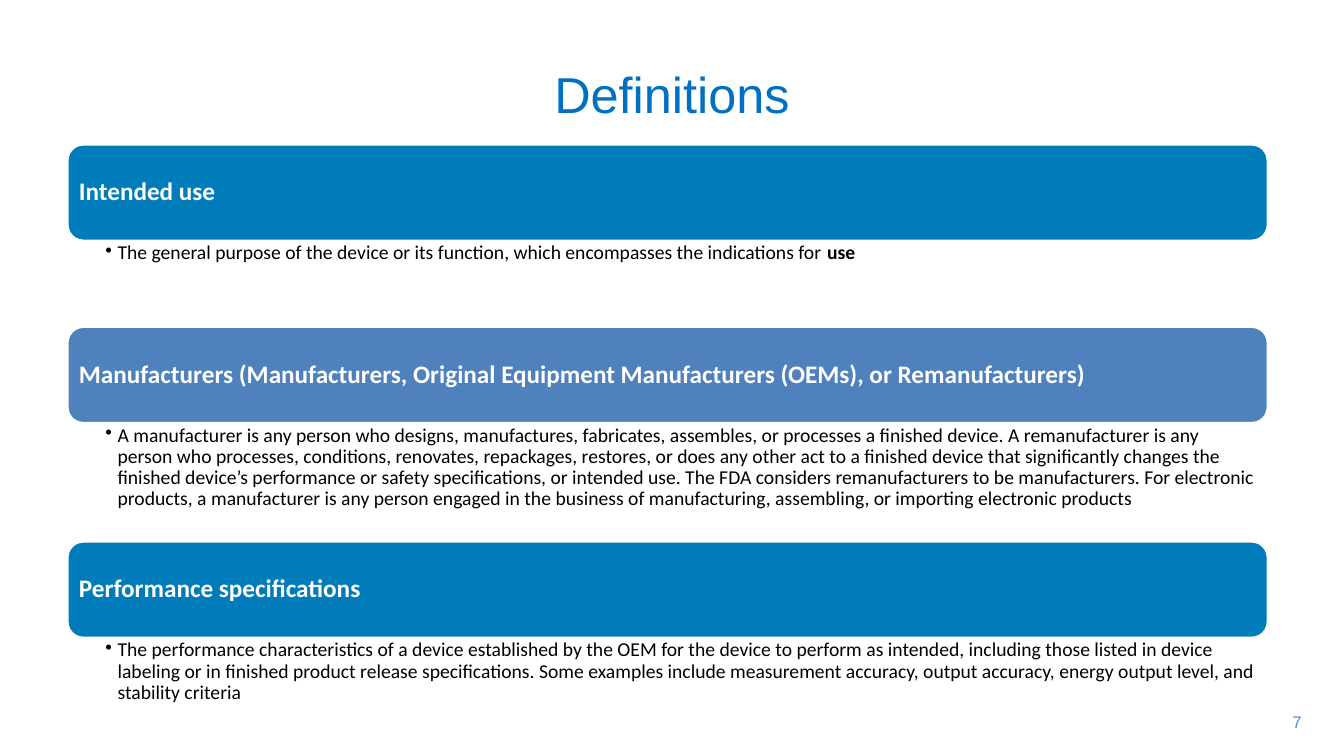
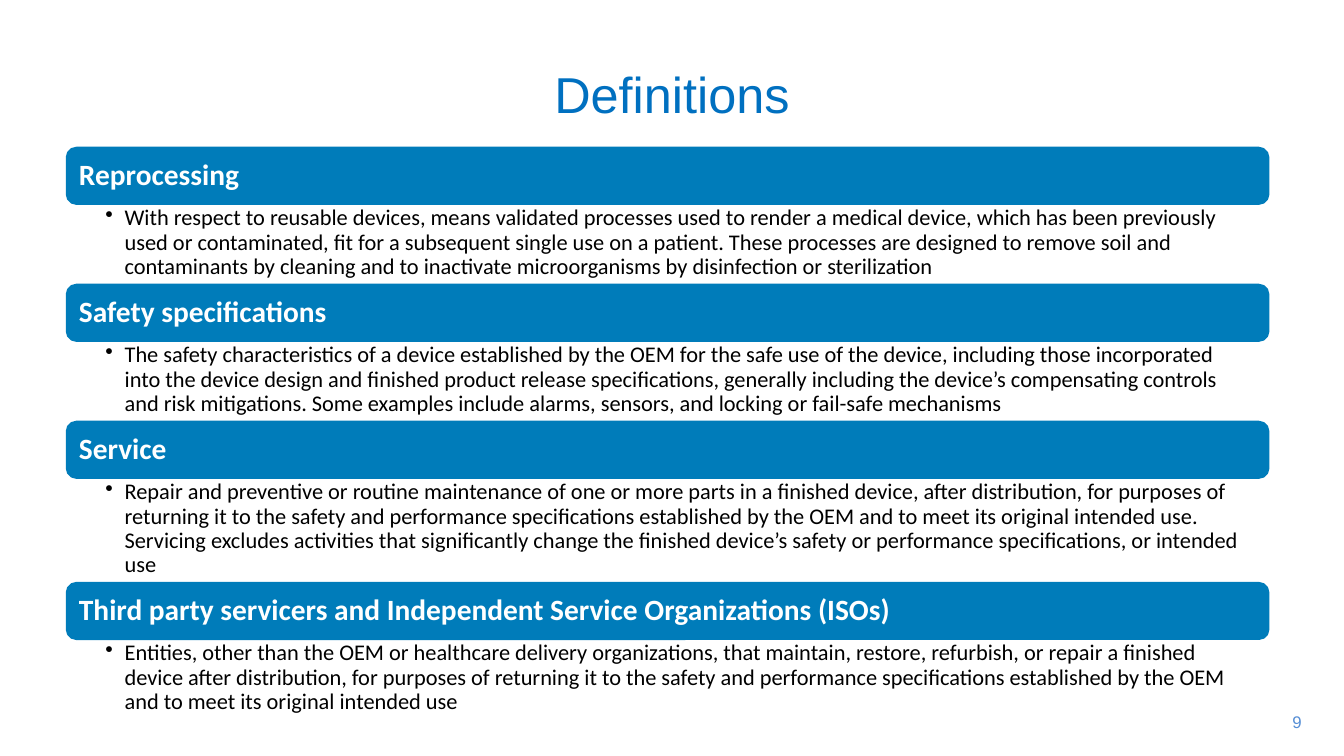
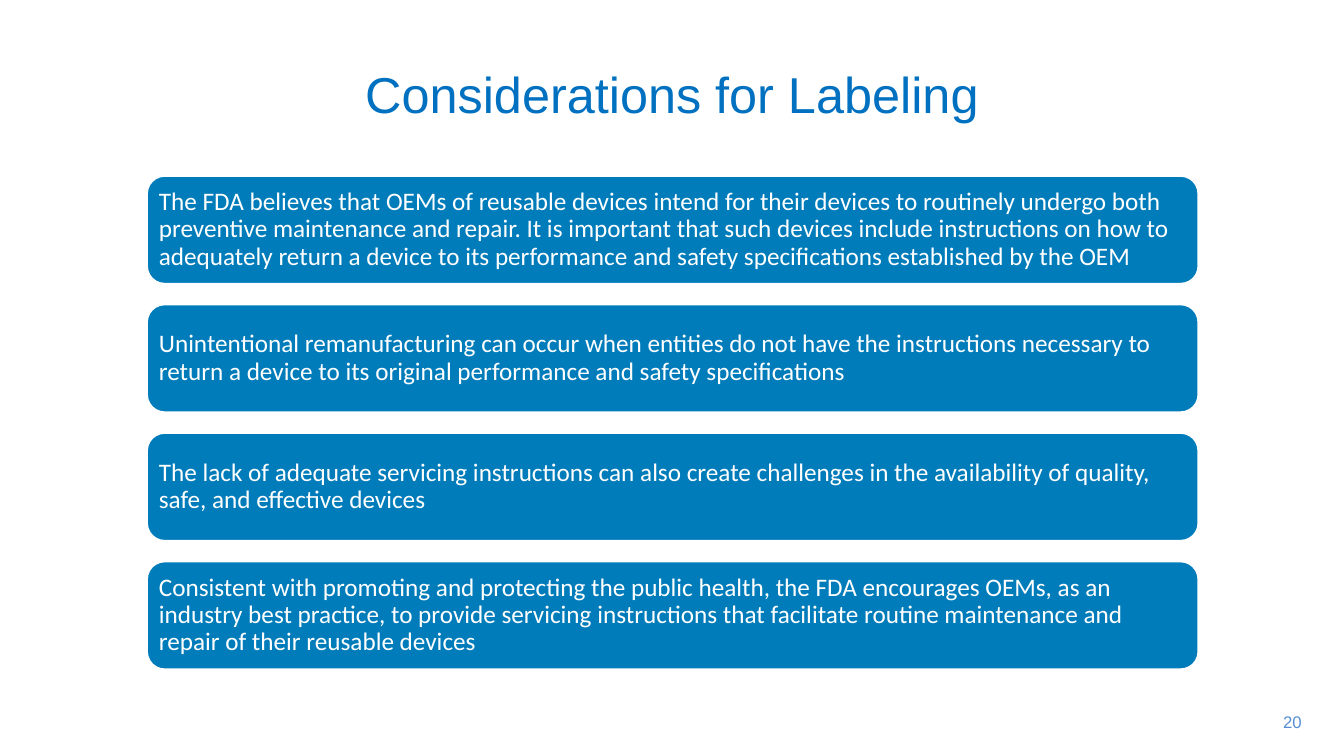
from lxml import etree
from pptx import Presentation
from pptx.dml.color import RGBColor
from pptx.enum.shapes import MSO_SHAPE
from pptx.enum.text import MSO_ANCHOR, MSO_AUTO_SIZE, PP_ALIGN
from pptx.oxml.ns import qn
from pptx.util import Inches, Pt

ROUNDED = MSO_SHAPE.ROUNDED_RECTANGLE
TOP, MIDDLE = MSO_ANCHOR.TOP, MSO_ANCHOR.MIDDLE
LEFT, CENTER, RIGHT = PP_ALIGN.LEFT, PP_ALIGN.CENTER, PP_ALIGN.RIGHT
NO_FIT = MSO_AUTO_SIZE.NONE

COLORS = {
    "title": "0070C0",
    "number": "558ED5",
    "bar": "007CBA",
    "accent": "4F81BD",
    "white": "FFFFFF",
    "black": "000000",
}
HEAD_FONT, BODY_FONT = "Arial", "Calibri"
COLS, ROWS = 20, 25
TITLE_ONLY = 5


def rgb(name):
    return RGBColor.from_string(COLORS[name])


class Deck:
    """Shared style and the slide being built; lengths are grid columns and rows."""

    def __init__(self):
        self.prs = Presentation()
        self.prs.slide_width, self.prs.slide_height = Inches(13.33), Inches(7.5)
        self.s = None

    def box(self, col, row, cols, rows):
        cw, rh = self.prs.slide_width / COLS, self.prs.slide_height / ROWS
        return [round(v) for v in (col * cw, row * rh, cols * cw, rows * rh)]

    def set_text(self, sp, runs, font, size, color, align=LEFT, anchor=MIDDLE,
                 insets=None, spacing=None, hang=None):
        """Fill sp with one paragraph of (text, bold) runs; hang adds a bullet."""
        tf = sp.text_frame
        tf.word_wrap, tf.auto_size, tf.vertical_anchor = True, NO_FIT, anchor
        if insets:
            (tf.margin_left, tf.margin_top,
             tf.margin_right, tf.margin_bottom) = map(Inches, insets)
        p = tf.paragraphs[0]
        p.alignment = align
        if hang:
            pPr = p._p.get_or_add_pPr()
            pPr.set("marL", str(Inches(hang)))
            pPr.set("indent", str(-Inches(hang)))
            etree.SubElement(pPr, qn("a:buChar")).set("char", "•")
        if spacing:
            p.line_spacing = spacing
        for text, bold in runs:
            r = p.add_run()
            r.text = text
            r.font.name, r.font.size, r.font.bold = font, Pt(size), bold
            r.font.color.rgb = rgb(color)

    def slide(self, title, number):
        self.s = self.prs.slides.add_slide(self.prs.slide_layouts[TITLE_ONLY])
        sp = self.s.shapes.title
        sp.left, sp.top, sp.width, sp.height = self.box(1, 1, 18, 4.17)
        self.set_text(sp, [(title, False)], HEAD_FONT, 36, "title", CENTER)
        sp = self.s.shapes.add_textbox(*self.box(18.9, 23.37, 0.62, 1))
        self.set_text(sp, [(str(number), False)], HEAD_FONT, 12, "number", RIGHT, TOP)

    def bar(self, box, text, size, bold, pad, fill="bar", line="white"):
        sp = self.s.shapes.add_shape(ROUNDED, *self.box(*box))
        sp.shadow.inherit = False
        sp.fill.solid()
        sp.fill.fore_color.rgb = rgb(fill)
        sp.line.color.rgb = rgb(line)
        sp.line.width = Pt(2)
        self.set_text(sp, [(text, bold)], BODY_FONT, size, "white",
                      insets=[pad] * 4, spacing=0.9)

    def bullet(self, box, runs, size, insets, hang):
        sp = self.s.shapes.add_textbox(*self.box(*box))
        self.set_text(sp, runs, BODY_FONT, size, "black", anchor=TOP,
                      insets=insets, spacing=0.9, hang=hang)

    def definitions(self, items, row, bar_rows, bar_style, bullet_style):
        """Stack bars, each followed by its bullet, down the slide."""
        left, cols = 1, 17.87
        for term, fill, body_rows, runs in items:
            self.bar((left, row, cols, bar_rows), term, fill=fill, **bar_style)
            row += bar_rows
            self.bullet((left, row, cols, body_rows), runs, **bullet_style)
            row += body_rows


USE_TERMS = [
    ("Intended use", "bar", 2.83, [
        ("The general purpose of the device or its function, which encompasses "
         "the indications for ", False),
        ("use", True)]),
    ("Manufacturers (Manufacturers, Original Equipment Manufacturers (OEMs), "
     "or Remanufacturers)", "accent", 3.9, [
        ("A manufacturer is any person who designs, manufactures, fabricates, "
         "assembles, or processes a finished device. A remanufacturer is any person "
         "who processes, conditions, renovates, repackages, restores, or does any "
         "other act to a finished device that significantly changes the finished "
         "device’s performance or safety specifications, or intended use. The FDA "
         "considers remanufacturers to be manufacturers. For electronic products, a "
         "manufacturer is any person engaged in the business of manufacturing, "
         "assembling, or importing electronic products", False)]),
    ("Performance specifications", "bar", 2.83, [
        ("The performance characteristics of a device established by the OEM for the "
         "device to perform as intended, including those listed in device labeling or "
         "in finished product release specifications. Some examples include "
         "measurement accuracy, output accuracy, energy output level, and stability "
         "criteria", False)]),
]

SERVICE_TERMS = [
    ("Reprocessing", "bar", 2.7, [
        ("With respect to reusable devices, means validated processes used to render "
         "a medical device, which has been previously used or contaminated, fit for a "
         "subsequent single use on a patient. These processes are designed to remove "
         "soil and contaminants by cleaning and to inactivate microorganisms by "
         "disinfection or sterilization", False)]),
    ("Safety specifications", "bar", 2.7, [
        ("The safety characteristics of a device established by the OEM for the safe "
         "use of the device, including those incorporated into the device design and "
         "finished product release specifications, generally including the device’s "
         "compensating controls and risk mitigations. Some examples include alarms, "
         "sensors, and locking or fail-safe mechanisms", False)]),
    ("Service", "bar", 3.5, [
        ("Repair and preventive or routine maintenance of one or more parts in a "
         "finished device, after distribution, for purposes of returning it to the "
         "safety and performance specifications established by the OEM and to meet "
         "its original intended use. Servicing excludes activities that significantly "
         "change the finished device’s safety or performance specifications, or "
         "intended use", False)]),
    ("Third party servicers and Independent Service Organizations (ISOs)", "bar", 2.7, [
        ("Entities, other than the OEM or healthcare delivery organizations, that "
         "maintain, restore, refurbish, or repair a finished device after "
         "distribution, for purposes of returning it to the safety and performance "
         "specifications established by the OEM and to meet its original intended "
         "use", False)]),
]

LABELING_POINTS = [
    "The FDA believes that OEMs of reusable devices intend for their devices to "
    "routinely undergo both preventive maintenance and repair. It is important that "
    "such devices include instructions on how to adequately return a device to its "
    "performance and safety specifications established by the OEM",
    "Unintentional remanufacturing can occur when entities do not have the "
    "instructions necessary to return a device to its original performance and "
    "safety specifications",
    "The lack of adequate servicing instructions can also create challenges in the "
    "availability of quality, safe, and effective devices",
    "Consistent with promoting and protecting the public health, the FDA encourages "
    "OEMs, as an industry best practice, to provide servicing instructions that "
    "facilitate routine maintenance and repair of their reusable devices",
]


def main():
    deck = Deck()

    deck.slide("Definitions", 7)
    deck.definitions(
        USE_TERMS, row=4.77, bar_rows=3.2,
        bar_style={"size": 18, "bold": True, "pad": 0.07},
        bullet_style={"size": 14, "insets": (0.38, 0.02, 0.11, 0.02), "hang": 0.12})

    deck.slide("Definitions", 9)
    deck.definitions(
        SERVICE_TERMS, row=4.9, bar_rows=1.83,
        bar_style={"size": 21, "bold": True, "pad": 0.09, "line": "bar"},
        bullet_style={"size": 16, "insets": (0.38, 0.03, 0.16, 0.03), "hang": 0.19})

    deck.slide("Considerations for Labeling", 20)
    for i, point in enumerate(LABELING_POINTS):
        deck.bar((2.18, 5.8 + 4.25 * i, 15.66, 3.6), point, 18, False, 0.07)

    deck.prs.save("out.pptx")


if __name__ == "__main__":
    main()
